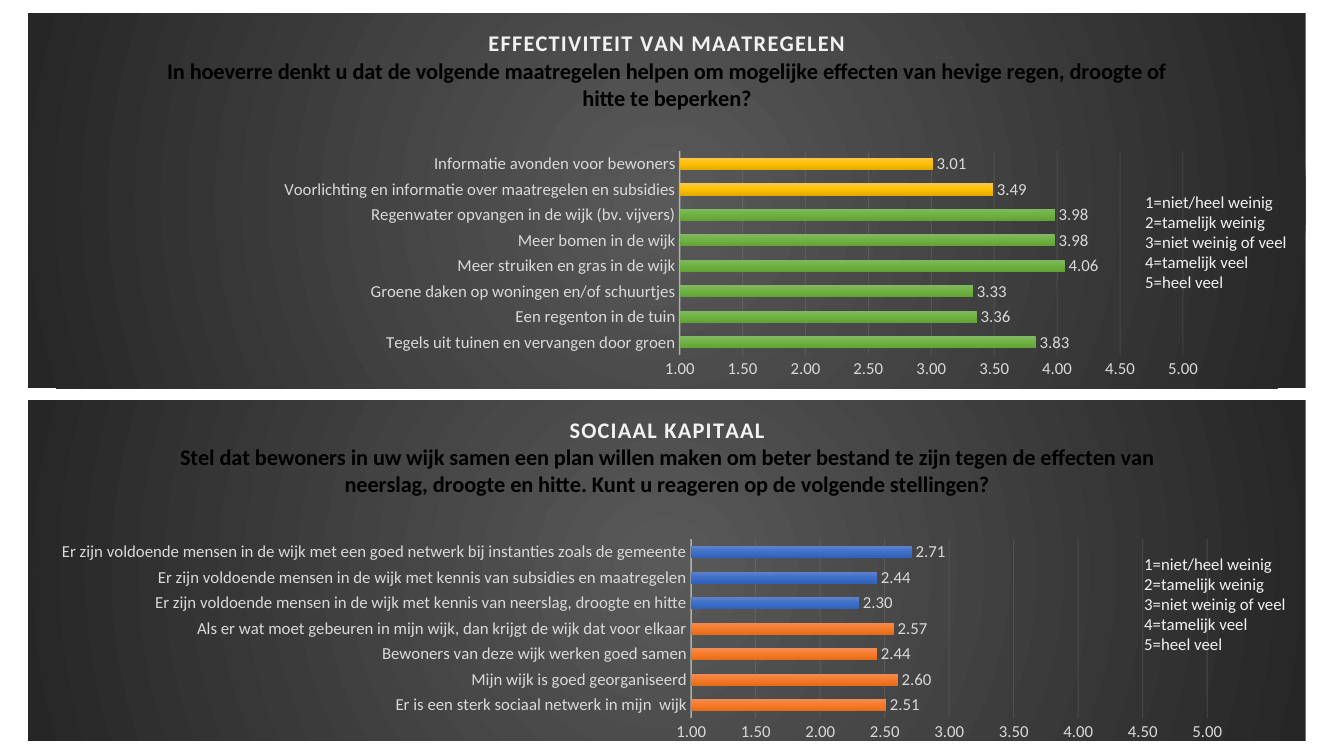
from lxml.etree import SubElement
from pptx import Presentation
from pptx.chart.data import CategoryChartData
from pptx.dml.color import RGBColor
from pptx.enum.chart import XL_CHART_TYPE, XL_LABEL_POSITION, XL_TICK_MARK
from pptx.enum.text import MSO_AUTO_SIZE
from pptx.oxml import parse_xml
from pptx.oxml.ns import nsdecls, qn
from pptx.util import Inches, Pt

FONT = "Calibri"
PALE = "F2F2F2"
LABEL = "D9D9D9"
GREEN = ["81B861", "6FB242", "62A336"]
YELLOW = ["FFC64B", "FFC000", "E3AB00"]
ORANGE = ["F18C57", "F67B28", "E56C19"]
BLUE = ["6183CB", "3E70CA", "3062BB"]
BACKDROP = ["595959", "262626"]
LINEAR = '<a:lin ang="5400000" scaled="0"/>'
RADIAL = ('<a:path path="circle"><a:fillToRect l="50000" t="50000" '
          'r="50000" b="50000"/></a:path>')

SCALE = ["1=niet/heel weinig", "2=tamelijk weinig", "3=niet weinig of veel",
         "4=tamelijk veel", "5=heel veel"]

MEASURES = {
    "heading": "EFFECTIVITEIT VAN MAATREGELEN",
    "question": "In hoeverre denkt u dat de volgende maatregelen helpen om mogelijke "
                "effecten van hevige regen, droogte of hitte te beperken?",
    "box": (0.28, 0.13, 12.67, 3.72),
    "plot": (0.51, 0.368, 0.394, 0.544),
    "scale_at": (11.26, 1.85),
    "bars": [
        ("Tegels uit tuinen en vervangen door groen", 3.83, GREEN),
        ("Een regenton in de tuin", 3.36, GREEN),
        ("Groene daken op woningen en/of schuurtjes", 3.33, GREEN),
        ("Meer struiken en gras in de wijk", 4.06, GREEN),
        ("Meer bomen in de wijk", 3.98, GREEN),
        ("Regenwater opvangen in de wijk (bv. vijvers)", 3.98, GREEN),
        ("Voorlichting en informatie over maatregelen en subsidies", 3.49, YELLOW),
        ("Informatie avonden voor bewoners", 3.01, YELLOW),
    ],
}

SOCIAL = {
    "heading": "SOCIAAL KAPITAAL",
    "question": "Stel dat bewoners in uw wijk samen een plan willen maken om beter "
                "bestand te zijn tegen de effecten van neerslag, droogte en hitte. "
                "Kunt u reageren op de volgende stellingen?",
    "box": (0.28, 3.97, 12.67, 3.39),
    "plot": (0.519, 0.408, 0.404, 0.525),
    "scale_at": (11.25, 5.44),
    "bars": [
        ("Er is een sterk sociaal netwerk in mijn  wijk", 2.51, ORANGE),
        ("Mijn wijk is goed georganiseerd", 2.60, ORANGE),
        ("Bewoners van deze wijk werken goed samen", 2.44, ORANGE),
        ("Als er wat moet gebeuren in mijn wijk, dan krijgt de wijk dat voor elkaar",
         2.57, ORANGE),
        ("Er zijn voldoende mensen in de wijk met kennis van neerslag, droogte en hitte",
         2.30, BLUE),
        ("Er zijn voldoende mensen in de wijk met kennis van subsidies en maatregelen",
         2.44, BLUE),
        ("Er zijn voldoende mensen in de wijk met een goed netwerk bij instanties "
         "zoals de gemeente", 2.71, BLUE),
    ],
}


def color(value):
    return RGBColor.from_string(value)


def apply(target, values):
    for name, value in values.items():
        setattr(target, name, value)


def style_font(font, size, value, bold=False):
    apply(font, {"name": FONT, "size": Pt(size), "bold": bold})
    font.color.rgb = color(value)


def gradient_xml(colors, direction):
    step = 100000 // (len(colors) - 1)
    stops = "".join(f'<a:gs pos="{index * step}"><a:srgbClr val="{value}"/></a:gs>'
                    for index, value in enumerate(colors))
    return (f'<a:gradFill {nsdecls("a")} rotWithShape="1"><a:gsLst>{stops}</a:gsLst>'
            f'{direction}</a:gradFill>')


def fill_gradient(shape_format, colors):
    fill = shape_format.fill
    fill.background()
    properties = fill._xPr
    properties.replace(properties.find(qn("a:noFill")),
                       parse_xml(gradient_xml(colors, LINEAR)))


def style_line(line, width, opacity):
    line.color.rgb = color(PALE)
    line.width = Pt(width)
    for tint in line._get_or_add_ln().iter(qn("a:srgbClr")):
        SubElement(tint, qn("a:alpha")).set("val", str(opacity * 1000))


def style_axes(chart):
    for axis in (chart.category_axis, chart.value_axis):
        apply(axis, {"major_tick_mark": XL_TICK_MARK.NONE,
                     "minor_tick_mark": XL_TICK_MARK.NONE})
        style_font(axis.tick_labels.font, 12, LABEL)
    style_line(chart.category_axis.format.line, 1, 54)
    values = chart.value_axis
    apply(values, {"minimum_scale": 1, "maximum_scale": 5, "major_unit": 0.5,
                   "has_major_gridlines": True})
    apply(values.tick_labels, {"number_format": "0.00",
                               "number_format_is_linked": False})
    values.format.line.fill.background()
    style_line(values.major_gridlines.format.line, 0.75, 10)


def style_bars(chart, bars):
    plot = chart.plots[0]
    apply(plot, {"gap_width": 115, "overlap": -20, "vary_by_categories": False,
                 "has_data_labels": True})
    apply(plot.data_labels, {"show_value": True, "number_format": "0.00",
                             "number_format_is_linked": False,
                             "position": XL_LABEL_POSITION.OUTSIDE_END})
    style_font(plot.data_labels.font, 12, LABEL)
    series = plot.series[0]
    series.invert_if_negative = False
    fill_gradient(series.format, BLUE)
    for index, (_, _, colors) in enumerate(bars):
        if colors is not BLUE:
            fill_gradient(series.points[index].format, colors)


def set_title(chart, heading, question):
    chart.has_title = True
    frame = chart.chart_title.text_frame
    first, second = frame.paragraphs[0], frame.add_paragraph()
    for para, text, value in ((first, heading, PALE), (second, question, "000000")):
        style_font(para.font, 16, value, True)
        span = para.add_run()
        span.text = text
        style_font(span.font, 16, value, True)
    first.runs[0].font._element.set("spc", "100")


def set_backdrop(chart):
    chart._chartSpace.find(qn("c:chart")).addnext(parse_xml(
        f'<c:spPr {nsdecls("c", "a")}>{gradient_xml(BACKDROP, RADIAL)}'
        '<a:ln><a:noFill/></a:ln></c:spPr>'))


def place_plot(chart, position):
    area = chart._chartSpace.find(".//" + qn("c:plotArea"))
    for old in area.findall(qn("c:layout")):
        area.remove(old)
    sizes = "".join(f'<c:{name} val="{value}"/>'
                    for name, value in zip("xywh", position))
    area.insert(0, parse_xml(
        f'<c:layout {nsdecls("c")}><c:manualLayout><c:layoutTarget val="inner"/>'
        f'<c:xMode val="edge"/><c:yMode val="edge"/>{sizes}'
        '</c:manualLayout></c:layout>'))


def add_survey_chart(page, survey):
    data = CategoryChartData(number_format="0.00")
    data.categories = [label for label, _, _ in survey["bars"]]
    data.add_series("Series 1", [score for _, score, _ in survey["bars"]])
    chart = page.shapes.add_chart(XL_CHART_TYPE.BAR_CLUSTERED,
                                  *map(Inches, survey["box"]), data).chart
    chart.has_legend = False
    style_font(chart.font, 10, "000000")
    set_title(chart, survey["heading"], survey["question"])
    style_axes(chart)
    style_bars(chart, survey["bars"])
    set_backdrop(chart)
    place_plot(chart, survey["plot"])


def add_scale(page, left, top):
    box = page.shapes.add_textbox(Inches(left), Inches(top), Inches(1.92), Inches(1.11))
    frame = box.text_frame
    apply(frame, {"word_wrap": True, "auto_size": MSO_AUTO_SIZE.SHAPE_TO_FIT_TEXT,
                  "text": "\n".join(SCALE)})
    for para in frame.paragraphs:
        style_font(para.runs[0].font, 12, PALE)


def main():
    deck = Presentation()
    apply(deck, {"slide_width": Inches(13.33), "slide_height": Inches(7.5)})
    page = deck.slides.add_slide(deck.slide_layouts[6])
    surveys = (MEASURES, SOCIAL)
    for survey in surveys:
        add_survey_chart(page, survey)
    for survey in surveys:
        add_scale(page, *survey["scale_at"])
    deck.save("out.pptx")


if __name__ == "__main__":
    main()
